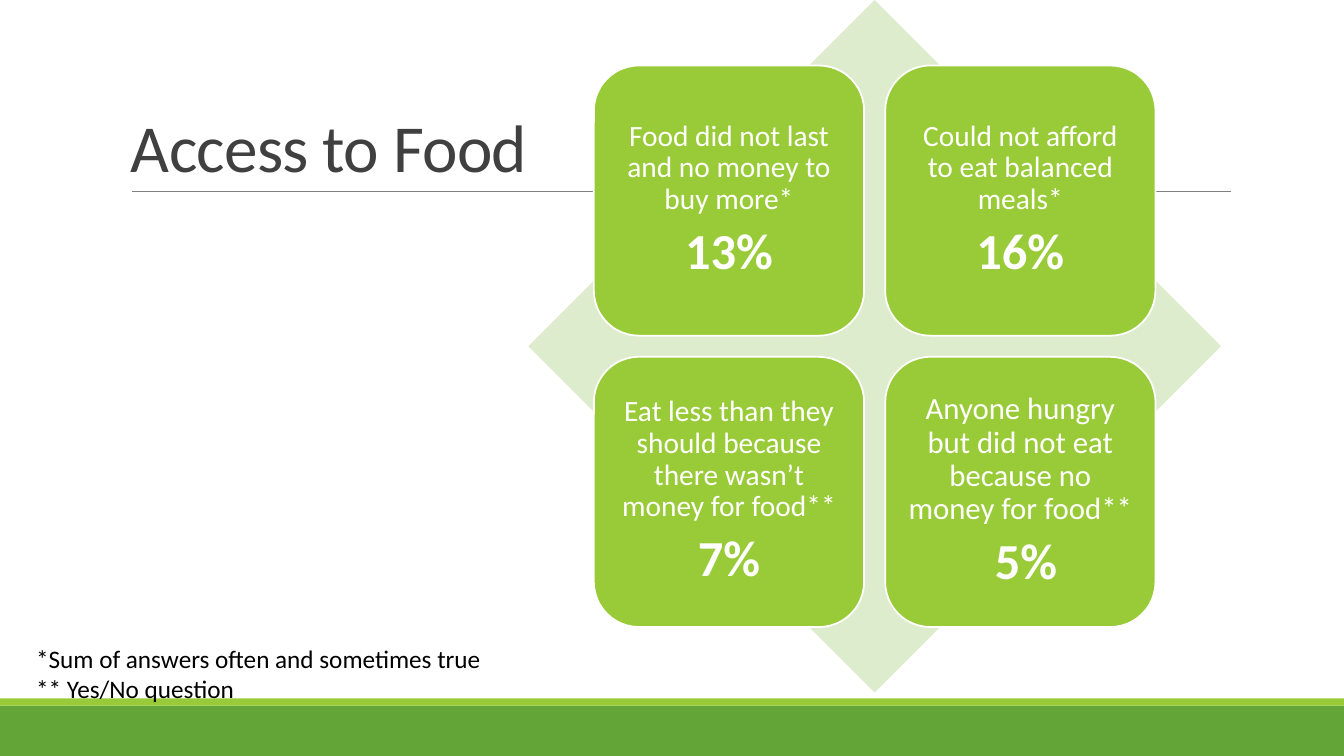
from lxml import etree
from pptx import Presentation
from pptx.dml.color import RGBColor
from pptx.enum.shapes import MSO_CONNECTOR, MSO_SHAPE
from pptx.enum.text import MSO_ANCHOR, PP_ALIGN
from pptx.oxml.ns import qn
from pptx.util import Pt

PX = 9144
RECT = MSO_SHAPE.RECTANGLE
ROUND = MSO_SHAPE.ROUNDED_RECTANGLE
DIAMOND = MSO_SHAPE.DIAMOND
STRAIGHT = MSO_CONNECTOR.STRAIGHT
MIDDLE = MSO_ANCHOR.MIDDLE
BOTTOM = MSO_ANCHOR.BOTTOM
CENTER = PP_ALIGN.CENTER

FONT = "Calibri"
WHITE, LIME, GREEN, PALE = "FFFFFF", "99CB38", "63A537", "DEECCE"
CARDS = [
    ("Food did not last and no money to buy more*", 21, "13%"),
    ("Could not afford to eat balanced meals*", 21, "16%"),
    ("Eat less than they should because there wasn’t money for food**", 21, "7%"),
    ("Anyone hungry but did not eat because no money for food**", 22, " 5%"),
]
NOTES = ["*Sum of answers often and sometimes true", "** Yes/No question"]


def px(*nums):
    """Turn px lengths into EMU."""
    return [num * PX for num in nums]


def color(code):
    """Turn a hex string into a color."""
    return RGBColor.from_string(code)


def add_block(slide, kind, box, fill, edge=None):
    """Add a flat filled shape, with an outline if edge is given."""
    shape = slide.shapes.add_shape(kind, *px(*box))
    shape.shadow.inherit = False
    shape.fill.solid()
    shape.fill.fore_color.rgb = color(fill)
    if edge:
        shape.line.color.rgb = color(edge)
        shape.line.width = Pt(1.25)
    else:
        shape.line.fill.background()
    return shape


def add_rule(slide, start, end, code):
    """Add a thin straight line."""
    rule = slide.shapes.add_connector(STRAIGHT, *px(*start, *end))
    rule.line.color.rgb = color(code)
    rule.line.width = Pt(0.5)
    etree.SubElement(rule.element.spPr, qn("a:effectLst"))


def style(para, text, size, code, bold=False):
    """Fill a paragraph with text in one font."""
    para.text = text
    para.font.name = FONT
    para.font.size = Pt(size)
    para.font.bold = bold
    para.font.color.rgb = color(code)


def add_text(slide, box, lines, size, code):
    """Add a text box with one paragraph per line."""
    frame = slide.shapes.add_textbox(*px(*box)).text_frame
    frame.word_wrap = True
    for index, line in enumerate(lines):
        para = frame.add_paragraph() if index else frame.paragraphs[0]
        style(para, line, size, code)
    return frame


def add_title(slide, text):
    """Add the tightly spaced slide title above the rule."""
    frame = add_text(slide, (120, 31, 1100, 159), [text], 48, "404040")
    frame.vertical_anchor = BOTTOM
    para = frame.paragraphs[0]
    para.line_spacing = 0.85
    para.runs[0].font._element.set("spc", "-50")


def add_card(slide, box, text, size, share):
    """Add a rounded card with a statement and its share."""
    frame = add_block(slide, ROUND, box, LIME, WHITE).text_frame
    frame.word_wrap = True
    frame.vertical_anchor = MIDDLE
    frame.margin_left = frame.margin_right = 9 * PX
    frame.margin_top = frame.margin_bottom = 9 * PX
    head, foot = frame.paragraphs[0], frame.add_paragraph()
    style(head, text, size, WHITE)
    style(foot, share, 36, WHITE, True)
    head.space_after = Pt(7)
    for para in (head, foot):
        para.alignment = CENTER
        para.line_spacing = 0.9


def main():
    """Build the slide and save it."""
    deck = Presentation()
    deck.slide_width, deck.slide_height = px(1333, 750)
    slide = deck.slides.add_slide(deck.slide_layouts[6])
    add_block(slide, RECT, (0, 700, 1333, 50), GREEN)
    add_block(slide, RECT, (0, 693, 1333, 7), LIME)
    add_rule(slide, (131, 190), (1221, 190), "808080")
    add_title(slide, "Access to Food")
    add_block(slide, DIAMOND, (524, 0, 687, 687), PALE)
    for index, card in enumerate(CARDS):
        row, col = divmod(index, 2)
        add_card(slide, (589 + 289 * col, 65 + 289 * row, 268, 268), *card)
    add_text(slide, (26, 633, 558, 71), NOTES, 18, "000000")
    deck.save("out.pptx")


if __name__ == "__main__":
    main()
